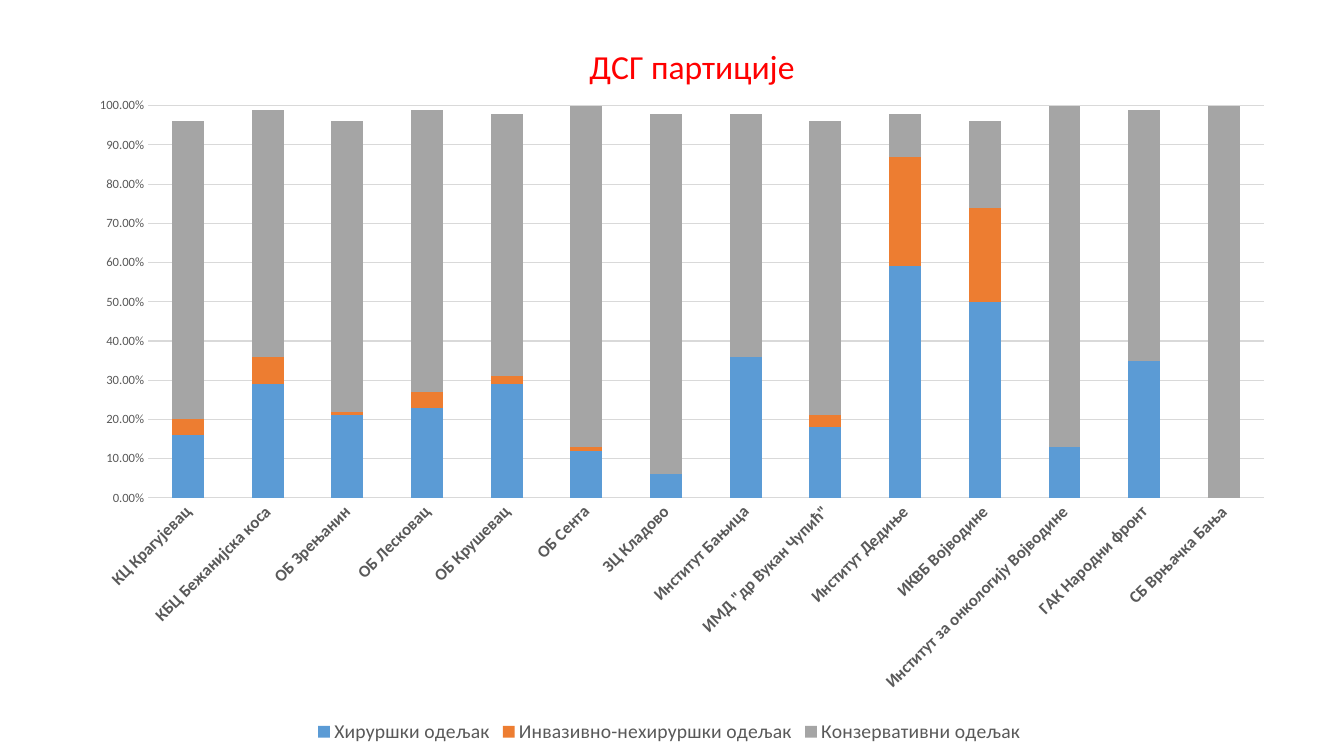
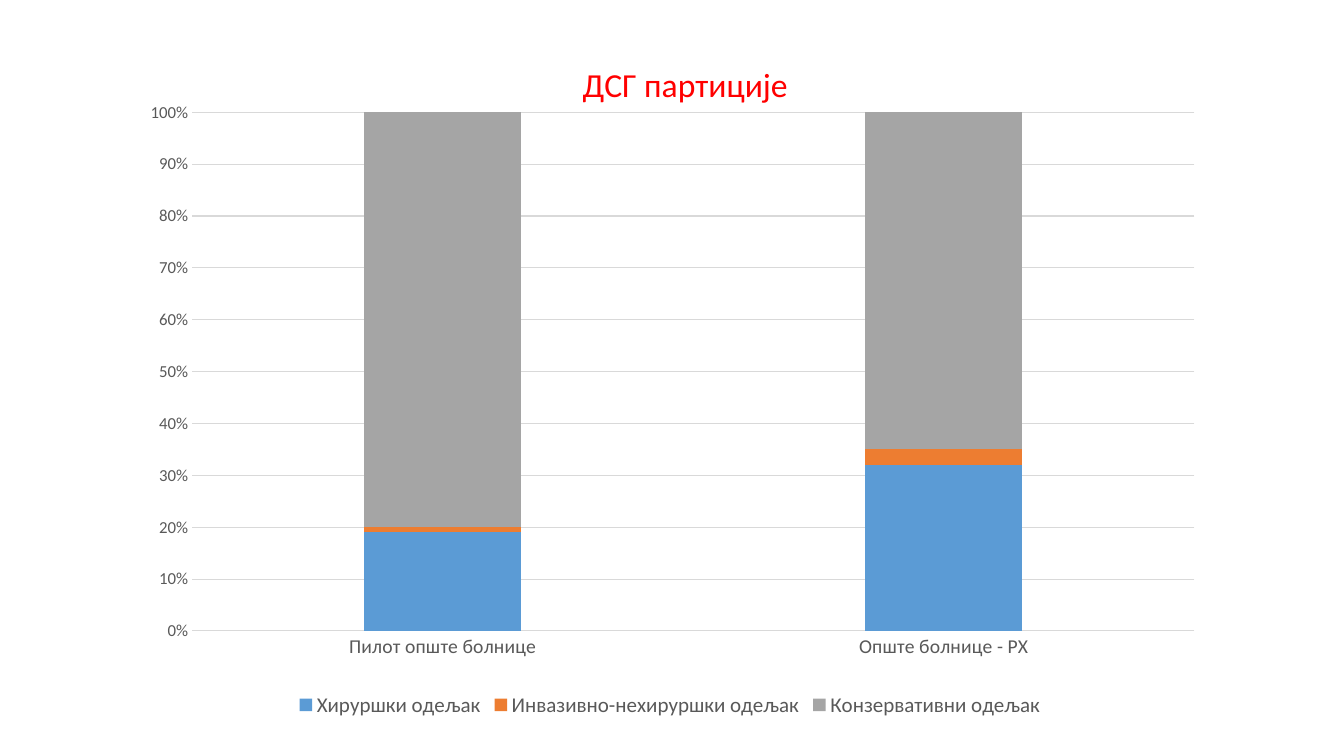
from dataclasses import dataclass
from pptx import Presentation
from pptx.chart.data import CategoryChartData
from pptx.dml.color import RGBColor
from pptx.enum.chart import XL_CHART_TYPE, XL_LEGEND_POSITION, XL_TICK_MARK
from pptx.oxml import parse_xml
from pptx.oxml.ns import nsdecls, qn
from pptx.util import Inches, Pt


@dataclass(frozen=True)
class Theme:
    font: str = "Calibri"
    title: str = "FF0000"
    text: str = "595959"
    grid: str = "D9D9D9"
    series: tuple = ("5B9BD5", "ED7D31", "A5A5A5")
    title_size: int = 24
    line: float = 0.75


THEME = Theme()
TITLE = "ДСГ партиције"
PARTITIONS = ("Хируршки одељак", "Инвазивно-нехируршки одељак", "Конзервативни одељак")

SLIDES = [
    dict(
        kind=XL_CHART_TYPE.COLUMN_STACKED, at=(0.71, 0.23, 11.86, 7.19),
        plot=(0.064, 0.114, 0.933, 0.541), title_at=(0.428, 0.02),
        gap=150, fmt="0.00%", top=1, cat_size=12, cat_bold=True, cat_turn=-45,
        cat_line=False, val_size=9, legend_size=14,
        rows=[
            ("КЦ Крагујевац", 0.16, 0.04, 0.76),
            ("КБЦ Бежанијска коса", 0.29, 0.07, 0.63),
            ("ОБ Зрењанин", 0.21, 0.01, 0.74),
            ("ОБ Лесковац", 0.23, 0.04, 0.72),
            ("ОБ Крушевац", 0.29, 0.02, 0.67),
            ("ОБ Сента", 0.12, 0.01, 0.87),
            ("ЗЦ Кладово", 0.06, 0, 0.92),
            ("Институт Бањица", 0.36, 0, 0.62),
            ('ИМД "др Вукан Чупић"', 0.18, 0.03, 0.75),
            ("Институт Дедиње", 0.59, 0.28, 0.11),
            ("ИКВБ Војводине", 0.5, 0.24, 0.22),
            ("Институт за онкологију Војводине", 0.13, 0, 0.87),
            ("ГАК Народни фронт", 0.35, 0, 0.64),
            ("СБ Врњачка Бања", 0, 0, 1),
        ],
    ),
    dict(
        kind=XL_CHART_TYPE.COLUMN_STACKED_100, at=(1.26, 0.45, 10.77, 6.71),
        plot=(0.06, 0.099, 0.923, 0.767), title_at=(0.414, 0.015),
        gap=219, fmt="0%", top=None, cat_size=14, cat_bold=False, cat_turn=0,
        cat_line=True, val_size=12, legend_size=15,
        rows=[
            ("Пилот опште болнице", 19, 1, 80),
            ("Опште болнице - РХ", 32, 3, 65),
        ],
    ),
]


def style(font, size, color=THEME.text, bold=False):
    font.name, font.size, font.bold = THEME.font, Pt(size), bold
    font.color.rgb = RGBColor.from_string(color)


def rule(line, shown=True):
    if shown:
        line.width = Pt(THEME.line)
        line.color.rgb = RGBColor.from_string(THEME.grid)
    else:
        line.fill.background()


def place(parent, index, share, inner=False):
    for old in parent.findall(qn("c:layout")):
        parent.remove(old)
    target = '<c:layoutTarget val="inner"/>' if inner else ""
    modes = "".join(f'<c:{n}Mode val="edge"/>' for n in "xy")
    sizes = "".join(f'<c:{n} val="{v}"/>' for n, v in zip("xywh", share))
    parent.insert(index, parse_xml(
        f'<c:layout {nsdecls("c")}><c:manualLayout>{target}{modes}{sizes}'
        "</c:manualLayout></c:layout>"))


def add_title(chart, at):
    chart.has_title = True
    title = chart.chart_title
    r = title.text_frame.paragraphs[0].add_run()
    r.text = TITLE
    style(r.font, THEME.title_size, THEME.title)
    title.include_in_layout = False
    place(title._element, 1, at)


def style_axes(chart, spec_):
    cat, val = chart.category_axis, chart.value_axis
    for axis in (cat, val):
        axis.major_tick_mark = axis.minor_tick_mark = XL_TICK_MARK.NONE
    style(cat.tick_labels.font, spec_["cat_size"], bold=spec_["cat_bold"])
    if spec_["cat_turn"]:
        body = cat._element.find(qn("c:txPr")).find(qn("a:bodyPr"))
        body.set("rot", str(spec_["cat_turn"] * 60000))
    rule(cat.format.line, spec_["cat_line"])

    style(val.tick_labels.font, spec_["val_size"])
    val.tick_labels.number_format = spec_["fmt"]
    val.tick_labels.number_format_is_linked = False
    val.minimum_scale, val.maximum_scale = 0, spec_["top"]
    rule(val.format.line, False)
    val.has_major_gridlines = True
    rule(val.major_gridlines.format.line)


def add_partition_chart(s, spec_):
    names, *columns = zip(*spec_["rows"])
    data = CategoryChartData()
    data.categories = names
    for name, values in zip(PARTITIONS, columns):
        data.add_series(name, values)
    box = [Inches(v) for v in spec_["at"]]
    chart = s.shapes.add_chart(spec_["kind"], *box, data).chart
    style(chart.font, 10, "000000")
    add_title(chart, spec_["title_at"])
    style_axes(chart, spec_)

    plot = chart.plots[0]
    plot.gap_width, plot.overlap = spec_["gap"], 100
    plot.vary_by_categories = False
    for series, color in zip(plot.series, THEME.series):
        series.format.fill.solid()
        series.format.fill.fore_color.rgb = RGBColor.from_string(color)
    place(chart._chartSpace.chart.plotArea, 0, spec_["plot"], inner=True)

    chart.has_legend = True
    chart.legend.position = XL_LEGEND_POSITION.BOTTOM
    chart.legend.include_in_layout = False
    style(chart.legend.font, spec_["legend_size"])


def main():
    prs = Presentation()
    prs.slide_width, prs.slide_height = Inches(13.33), Inches(7.5)
    for content in SLIDES:
        add_partition_chart(prs.slides.add_slide(prs.slide_layouts[6]), content)
    prs.save("out.pptx")


if __name__ == "__main__":
    main()
